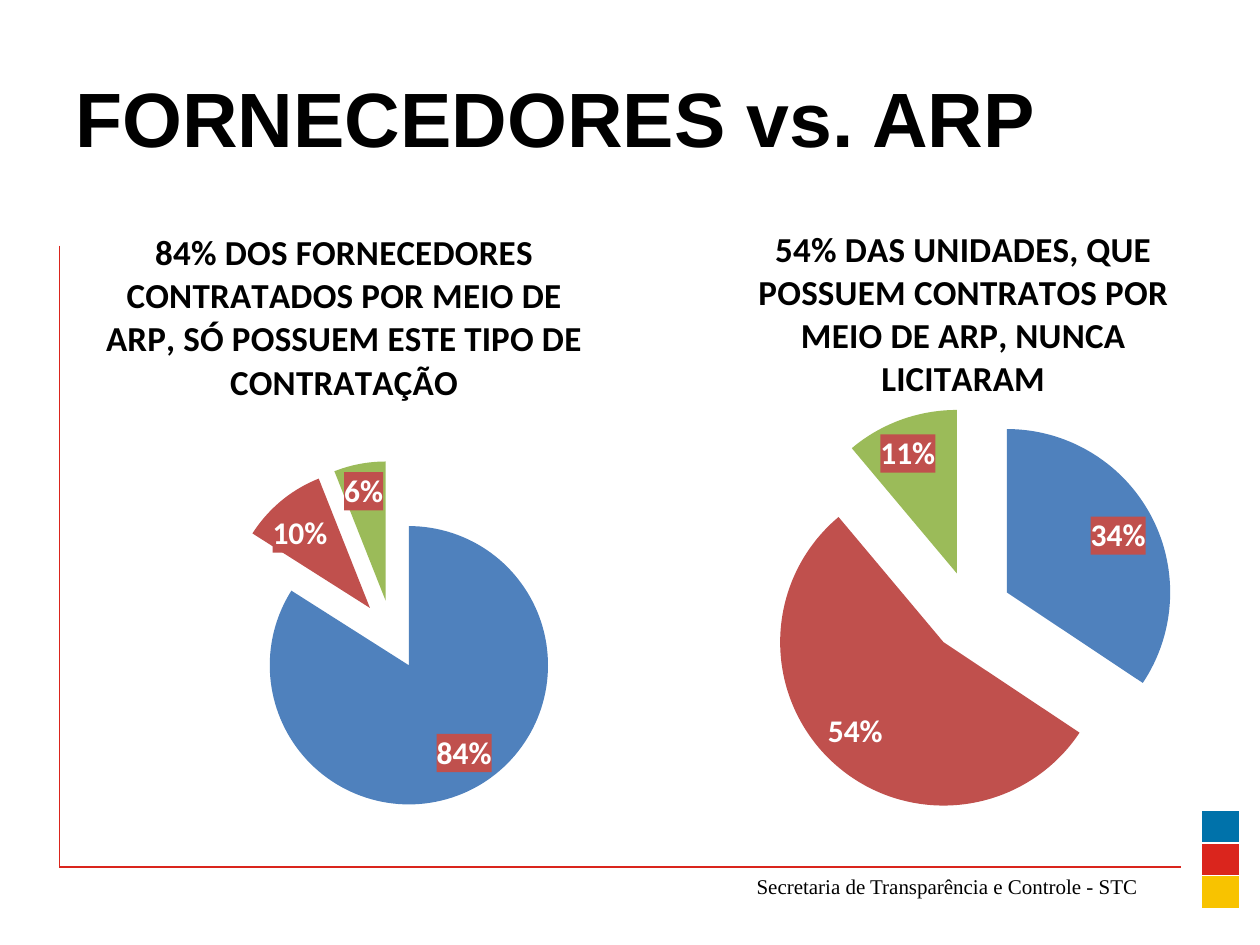
from dataclasses import dataclass

from lxml import etree
from pptx import Presentation
from pptx.chart.data import CategoryChartData
from pptx.dml.color import RGBColor
from pptx.enum.chart import XL_CHART_TYPE as ChartType, XL_LABEL_POSITION as LabelPosition
from pptx.enum.shapes import MSO_CONNECTOR as Connector
from pptx.enum.text import MSO_ANCHOR as Anchor, PP_ALIGN as Align
from pptx.oxml import parse_xml
from pptx.oxml.ns import nsdecls, qn
from pptx.util import Inches, Pt


@dataclass(frozen=True)
class Theme:
    ink: str = "000000"
    white: str = "FFFFFF"
    rule: str = "DA251D"
    flag: tuple = ("0072AA", "DA251D", "F8C300")
    slices: tuple = ("4F81BD", "C0504D", "9BBB59")
    label_fill: str = "C0504D"
    title_size: int = 44
    heading_size: int = 20
    label_size: int = 18
    chart_size: int = 10
    footer_size: int = 12


THEME = Theme()


def rgb(value):
    return RGBColor.from_string(value)


def style_font(font, size, color=THEME.ink, name="Calibri", bold=False):
    font.size, font.name, font.bold = Pt(size), name, bold
    font.color.rgb = rgb(color)


def write_text(frame, text, align=Align.LEFT, **font_format):
    frame.word_wrap = True
    paragraph = frame.paragraphs[0]
    paragraph.alignment = align
    run = paragraph.add_run()
    run.text = text
    style_font(run.font, **font_format)


def place(shape, left, top, width, height):
    shape.left, shape.top = Inches(left), Inches(top)
    shape.width, shape.height = Inches(width), Inches(height)


def add_rule(slide, start, end):
    rule = slide.shapes.add_connector(Connector.STRAIGHT, *map(Inches, start + end))
    rule.line.color.rgb = rgb(THEME.rule)
    rule.line.width = Pt(0.75)
    etree.SubElement(rule._element.spPr, qn("a:effectLst"))


def add_flag(slide, left, top, width, row_height):
    """Stack one table cell for each flag colour."""
    count = len(THEME.flag)
    table = slide.shapes.add_table(count, 1, Inches(left), Inches(top), Inches(width),
                                   Inches(row_height * count)).table
    table.first_row = table.horz_banding = False
    for row, color in zip(table.rows, THEME.flag):
        row.height = Inches(row_height)
        cell = row.cells[0]
        cell.fill.solid()
        cell.fill.fore_color.rgb = rgb(color)
        cell.margin_top = cell.margin_bottom = 0
        cell.text_frame.paragraphs[0].font.size = Pt(THEME.chart_size)


def layout_xml(target=None, **fractions):
    """Give a manual chart layout; fractions are x, y and optionally w, h."""
    parts = [f'<c:layoutTarget val="{target}"/>'] if target else []
    parts += [f'<c:{axis}Mode val="edge"/>' for axis in "xy"]
    parts += [f'<c:{key} val="{value}"/>' for key, value in fractions.items()]
    return parse_xml(f'<c:layout {nsdecls("c")}><c:manualLayout>{"".join(parts)}'
                     '</c:manualLayout></c:layout>')


def set_layout(parent, layout, after=None):
    """Replace the layout of a chart part, keeping the schema order."""
    for old in parent.findall(qn("c:layout")):
        parent.remove(old)
    if after is None:
        parent.insert(0, layout)
    else:
        parent.find(qn(after)).addnext(layout)


def add_exploded_pie(slide, box, heading, shares, heading_at, plot):
    data = CategoryChartData(number_format='0"%"')
    data.categories = ["1", "2", "3"]
    data.add_series("Series 1", shares)
    chart = slide.shapes.add_chart(ChartType.PIE, *map(Inches, box), data).chart
    style_font(chart.font, THEME.chart_size)
    chart.has_legend = False
    chart.has_title = True
    write_text(chart.chart_title.text_frame, heading, align=Align.CENTER,
               size=THEME.heading_size, bold=True)
    chart.chart_title.include_in_layout = False
    set_layout(chart.chart_title._element, layout_xml(**heading_at), after="c:tx")
    set_layout(chart._chartSpace.chart.plotArea, layout_xml("inner", **plot))

    pie = chart.plots[0]
    pie.vary_by_categories = True
    series = pie.series[0]
    for index, color in enumerate(THEME.slices):
        fill = series.points[index].format.fill
        fill.solid()
        fill.fore_color.rgb = rgb(color)
    explosion = parse_xml(f'<c:explosion {nsdecls("c")} val="25"/>')
    series._element.find(qn("c:dPt")).addprevious(explosion)

    labels = series.data_labels
    labels.show_value = True
    labels.number_format = '0"%"'
    labels.number_format_is_linked = False
    labels.position = LabelPosition.BEST_FIT
    style_font(labels.font, THEME.label_size, THEME.white, bold=True)
    label_fill = parse_xml(f'<c:spPr {nsdecls("c", "a")}><a:solidFill>'
                           f'<a:srgbClr val="{THEME.label_fill}"/></a:solidFill></c:spPr>')
    labels._element.find(qn("c:txPr")).addprevious(label_fill)


def main():
    deck = Presentation()
    deck.slide_width, deck.slide_height = Inches(10), Inches(7.5)
    slide = deck.slides.add_slide(deck.slide_layouts[5])

    corner = (0.47, 6.88)
    add_rule(slide, (0.47, 1.95), corner)
    add_rule(slide, corner, (9.37, 6.88))
    footer = slide.shapes.add_textbox(*map(Inches, (0.86, 6.88, 8.27, 0.3)))
    write_text(footer.text_frame, "Secretaria de Transparência e Controle - STC",
               align=Align.RIGHT, size=THEME.footer_size, name="Times New Roman")
    add_flag(slide, 9.53, 6.43, 0.31, 0.26)

    title = slide.shapes.title
    place(title, 0.5, 0.3, 7.96, 1.25)
    title.text_frame.vertical_anchor = Anchor.MIDDLE
    write_text(title.text_frame, "FORNECEDORES vs. ARP",
               size=THEME.title_size, name="Arial", bold=True)

    add_exploded_pie(
        slide, (0.43, 1.55, 5.16, 5.02),
        "84% DOS FORNECEDORES CONTRATADOS POR MEIO DE ARP, SÓ POSSUEM ESTE TIPO DE CONTRATAÇÃO",
        (84, 10, 6), dict(x=0.07, y=0.04), dict(x=0.25, y=0.42, w=0.54, h=0.55))
    add_exploded_pie(
        slide, (5.08, 1.39, 4.45, 5.59),
        "54% DAS UNIDADES, QUE POSSUEM CONTRATOS POR MEIO DE ARP, NUNCA LICITARAM",
        (34, 54, 11), dict(x=0.2, y=0.06), dict(x=0.18, y=0.33, w=0.82, h=0.58))

    deck.save("out.pptx")


if __name__ == "__main__":
    main()
